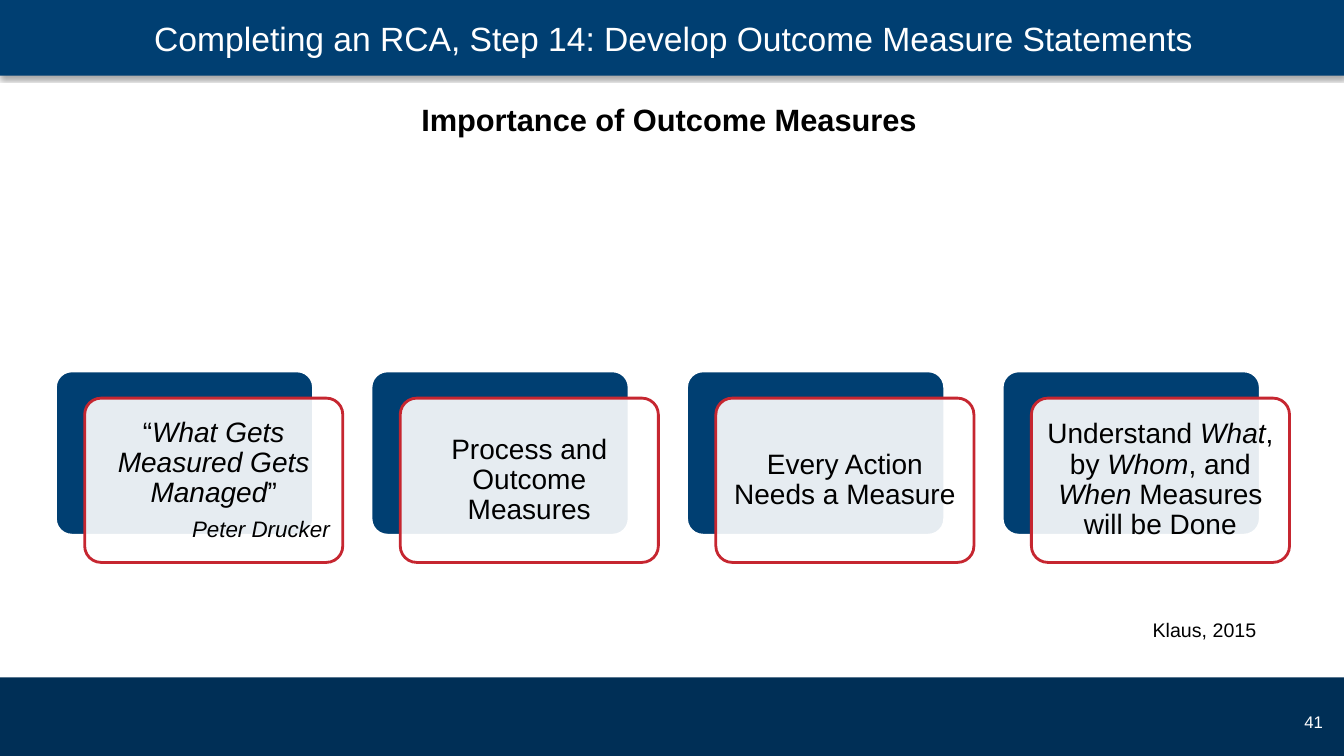
from dataclasses import dataclass

from lxml import etree
from pptx import Presentation
from pptx.dml.color import RGBColor
from pptx.enum.shapes import MSO_SHAPE
from pptx.enum.text import MSO_ANCHOR, MSO_AUTO_SIZE, PP_ALIGN
from pptx.oxml.ns import qn
from pptx.shapes.autoshape import Shape
from pptx.slide import Slide
from pptx.text.text import TextFrame
from pptx.util import Inches, Pt

RECT, ROUND = MSO_SHAPE.RECTANGLE, MSO_SHAPE.ROUNDED_RECTANGLE
LEFT, CENTER, RIGHT = PP_ALIGN.LEFT, PP_ALIGN.CENTER, PP_ALIGN.RIGHT
TOP, MIDDLE = MSO_ANCHOR.TOP, MSO_ANCHOR.MIDDLE
NO_FIT = MSO_AUTO_SIZE.NONE


@dataclass(frozen=True)
class Theme:
    font: str = "Arial"
    navy: str = "003F72"
    deep: str = "002F56"
    red: str = "C62630"
    white: str = "FFFFFF"
    black: str = "000000"
    title: int = 24
    heading: int = 22
    body: int = 20
    credit: int = 16
    source: int = 14
    number: int = 12


@dataclass(frozen=True)
class Box:
    left: float
    top: float
    width: float
    height: float

    def emu(self) -> tuple[int, int, int, int]:
        return (Inches(self.left), Inches(self.top),
                Inches(self.width), Inches(self.height))


@dataclass(frozen=True)
class Card:
    text: str
    credit: str = ""


THEME = Theme()
CARDS = [
    Card("“*What Gets Measured Gets Managed*”", "*Peter Drucker*"),
    Card("Process and Outcome Measures"),
    Card("Every Action Needs a Measure"),
    Card("Understand *What*, by *Whom*, and *When* Measures will be Done"),
]
CARD_W, CARD_H, PITCH = 2.56, 1.63, 3.13
BACK_X, BACK_Y = 0.55, 3.68
SHIFT_X, SHIFT_Y = 0.29, 0.27


def write(frame: TextFrame, text: str, *, size: int, color: str = THEME.black,
          align: PP_ALIGN = LEFT, bold: bool = False, more: bool = False,
          line: float = 1.0, after: float = 0) -> None:
    par = frame.add_paragraph() if more else frame.paragraphs[0]
    par.alignment = align
    par.line_spacing = line
    par.space_before, par.space_after = Pt(0), Pt(after)
    for i, part in enumerate(text.split("*")):
        if not part:
            continue
        run = par.add_run()
        run.text = part
        font = run.font
        font.name, font.size = THEME.font, Pt(size)
        font.bold, font.italic = bold, i % 2 == 1
        font.color.rgb = RGBColor.from_string(color)


def block(slide: Slide, kind: MSO_SHAPE, box: Box, fill: str,
          line: str = "") -> Shape:
    shape = slide.shapes.add_shape(kind, *box.emu())
    shape.shadow.inherit = False
    shape.fill.solid()
    shape.fill.fore_color.rgb = RGBColor.from_string(fill)
    if kind == ROUND:
        shape.adjustments[0] = 0.1
    if line:
        shape.line.color.rgb = RGBColor.from_string(line)
        shape.line.width = Pt(2)
    else:
        shape.line.fill.background()
    return shape


def label(slide: Slide, box: Box, wrap: bool = True) -> TextFrame:
    frame = slide.shapes.add_textbox(*box.emu()).text_frame
    frame.word_wrap = wrap
    return frame


def fade(shape: Shape, percent: int) -> None:
    color = shape.fill._xPr.find(qn("a:solidFill"))[0]
    etree.SubElement(color, qn("a:alpha"), val=str(percent * 1000))


def shade(shape: Shape) -> None:
    effects = shape.element.spPr.find(qn("a:effectLst"))
    outer = etree.SubElement(effects, qn("a:outerShdw"),
                             blurRad=str(Pt(3.1)), dist=str(Pt(1.8)),
                             dir="5400000", algn="t", rotWithShape="0")
    color = etree.SubElement(outer, qn("a:srgbClr"), val=THEME.black)
    etree.SubElement(color, qn("a:alpha"), val="35000")


def draw_card(slide: Slide, card: Card, left: float) -> None:
    block(slide, ROUND, Box(left, BACK_Y, CARD_W, CARD_H),
          THEME.navy, THEME.white)
    front = block(slide, ROUND,
                  Box(left + SHIFT_X, BACK_Y + SHIFT_Y, CARD_W, CARD_H),
                  THEME.white, THEME.red)
    fade(front, 90)
    frame = front.text_frame
    frame.word_wrap = True
    frame.vertical_anchor = MIDDLE
    frame.margin_left = frame.margin_right = Inches(0.08)
    frame.margin_top = frame.margin_bottom = Inches(0.08)
    write(frame, card.text, size=THEME.body, align=CENTER, line=0.9, after=7)
    if card.credit:
        write(frame, card.credit, size=THEME.credit, align=RIGHT,
              line=0.9, after=5.6, more=True)


def draw_title(slide: Slide) -> None:
    title = slide.shapes.title
    title.left, title.top, title.width, title.height = Box(
        0.68, 0, 12, 0.75).emu()
    title.element.getparent().append(title.element)
    frame = title.text_frame
    frame.auto_size = NO_FIT
    frame.word_wrap = True
    frame.vertical_anchor = MIDDLE
    write(frame,
          "Completing an RCA, Step 14: Develop Outcome Measure Statements",
          size=THEME.title, color=THEME.white, align=CENTER)


def main() -> None:
    deck = Presentation()
    deck.slide_width, deck.slide_height = Inches(13.33), Inches(7.5)
    slide = deck.slides.add_slide(deck.slide_layouts[5])

    shade(block(slide, RECT, Box(0, 0, 13.33, 0.75), THEME.navy))
    block(slide, RECT, Box(0, 6.72, 13.33, 0.78), THEME.deep)
    number = label(slide, Box(10.89, 6.96, 2.33, 0.4))
    number.vertical_anchor = MIDDLE
    write(number, "41", size=THEME.number, color=THEME.white, align=RIGHT)

    for i, card in enumerate(CARDS):
        draw_card(slide, card, BACK_X + i * PITCH)

    write(label(slide, Box(10.28, 6.08, 2.28, 0.34)), "Klaus, 2015",
          size=THEME.source, align=RIGHT)
    draw_title(slide)
    write(label(slide, Box(4.08, 0.95, 5.18, 0.47), wrap=False),
          "Importance of Outcome Measures", size=THEME.heading, bold=True)
    deck.save("out.pptx")


if __name__ == "__main__":
    main()
